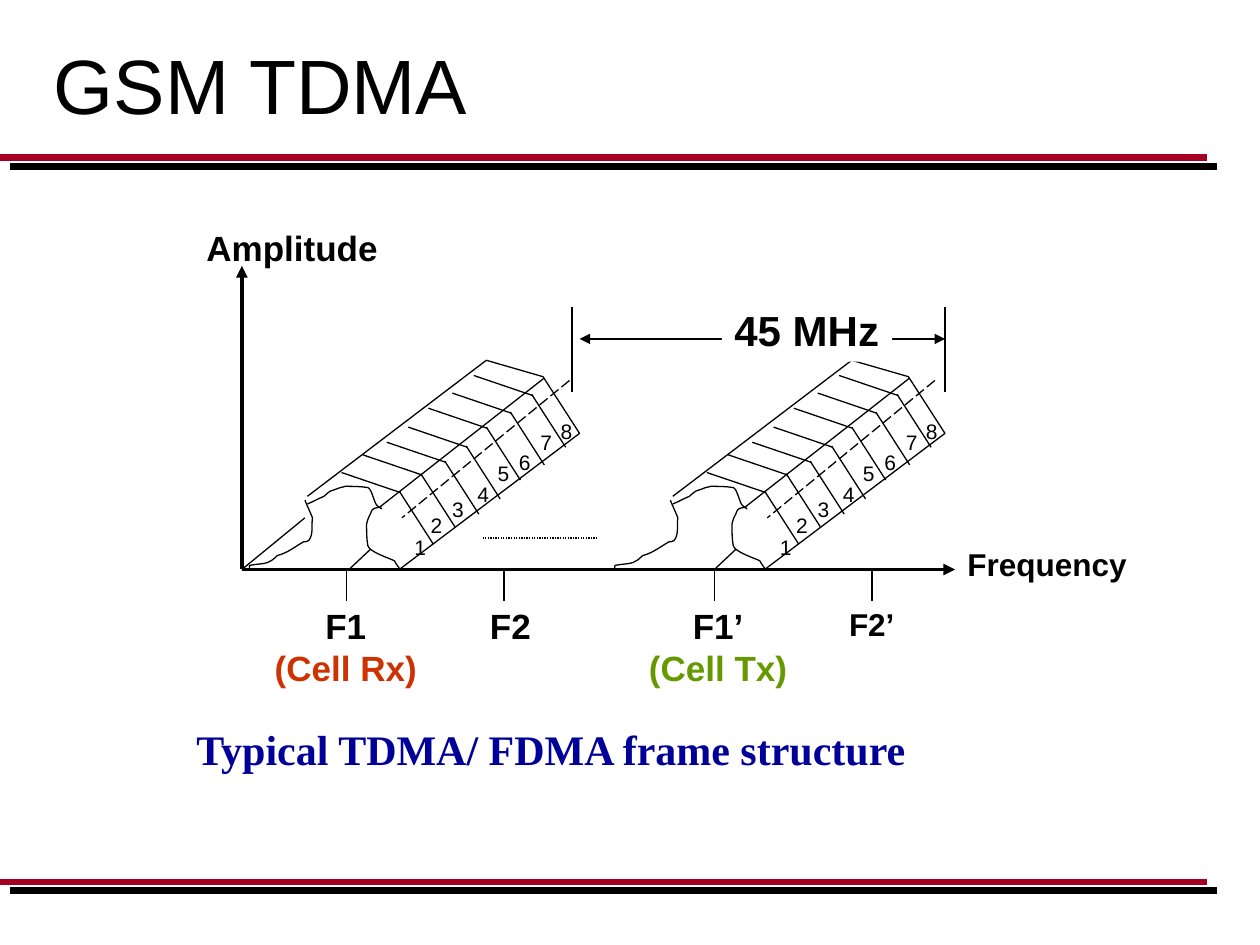
from lxml.etree import SubElement as Sub
from pptx import Presentation
from pptx.dml.color import RGBColor as Rgb
from pptx.enum.dml import MSO_LINE as Dash
from pptx.enum.shapes import MSO_CONNECTOR as Link
from pptx.enum.text import MSO_ANCHOR as Anchor, MSO_AUTO_SIZE as Auto, PP_ALIGN as Align
from pptx.oxml.ns import qn
from pptx.util import Cm, Pt

UNIT = Cm(0.0254)  # grid step: a hundredth of an inch
THEME = {
    "ink": "000000", "paper": "FFFFFF", "rule": "A50021", "edge": "0000FF",
    "rx": "CC3300", "tx": "669900", "note": "000099",
    "sans": "Arial", "serif": "Times New Roman",
    "title": 44, "big": 24, "label": 20, "small": 18, "digit": 12,
    "thin": 0.75, "axis": 2.25, "bar": 4,
}

deck = Presentation()
deck.slide_width, deck.slide_height = Cm(25.4), Cm(19.05)
slide = deck.slides.add_slide(deck.slide_layouts[6])
shapes = slide.shapes


def draw_line(x1, y1, x2, y2, width="thin", color="ink", dash=None, ends=()):
    """Draw a line; ends names the arrowhead elements to add."""
    link = shapes.add_connector(Link.STRAIGHT, *(UNIT * n for n in (x1, y1, x2, y2)))
    link.line.color.rgb = Rgb.from_string(THEME[color])
    style = {"width": Pt(THEME[width]), "dash_style": dash}
    for key, value in style.items():
        setattr(link.line, key, value)
    props = link.element.spPr
    for end in ends:
        Sub(props.find(qn("a:ln")), qn(f"a:{end}"), type="triangle")
    return Sub(props, qn("a:effectLst"))


def write(x, y, w, h, rows, size, bold=True, face="sans", wrap=False, align=None):
    """Write rows of (text, color) in a box, one paragraph each."""
    box = shapes.add_textbox(*(UNIT * n for n in (x, y, w, h)))
    frame = box.text_frame
    frame.word_wrap = wrap
    frame.auto_size = Auto.SHAPE_TO_FIT_TEXT
    style = {"name": THEME[face], "size": Pt(THEME[size]), "bold": bold}
    for i, (text, color) in enumerate(rows):
        para = frame.add_paragraph() if i else frame.paragraphs[0]
        para.alignment = align
        run = para.add_run()
        run.text = text
        run.font.color.rgb = Rgb.from_string(THEME[color])
        for key, value in style.items():
            setattr(run.font, key, value)
    return box


# Double rules above and below the content
for y in (125, 700):
    glow = draw_line(0, y, 958, y, "bar", "edge")
    shade = Sub(glow, qn("a:outerShdw"), dist=str(Pt(7.8)), dir="2400000",
                algn="ctr", rotWithShape="0")
    Sub(shade, qn("a:srgbClr"), val=THEME["ink"])
    draw_line(0, y, 958, y, "bar", "rule")

# Title
head = write(33, 0, 917, 133, [("GSM TDMA", "ink")], "title", bold=False, wrap=True)
head.text_frame.auto_size = Auto.NONE
head.text_frame.vertical_anchor = Anchor.MIDDLE

# Axes
draw_line(192, 452, 758, 452, "axis", ends=["tailEnd"])
draw_line(192, 211, 192, 452, "axis", ends=["headEnd"])

# Parts of one burst: block edge, torn curves, slot corners, digit places
BLOCK = [(244, 394), (386, 286), (431, 299), (460, 344), (317, 452)]
CURVES = [
    [(242, 397), (244, 402), (246, 406), (248, 411), (247, 417), (249, 424), (245, 429),
     (244, 430), (242, 430), (241, 430), (234, 434), (228, 439), (220, 441),
     (214, 447), (212, 447), (203, 448), (197, 449), (198, 448), (198, 451)],
    [(244, 400), (249, 398), (252, 396), (257, 394), (264, 388), (260, 391), (270, 387),
     (271, 387), (274, 386), (274, 386), (280, 386), (286, 386), (292, 387),
     (295, 388), (297, 399), (299, 401), (300, 402), (303, 404), (303, 404)],
    [(303, 402), (297, 404), (296, 402), (294, 408), (292, 411), (291, 416), (291, 416),
     (291, 422), (291, 428), (292, 433), (293, 438), (309, 443), (313, 445),
     (316, 450), (315, 448), (317, 451)],
]
SLOTS = [(376, 298), (359, 312), (340, 324), (324, 339), (307, 351), (288, 361), (271, 375)]
DIGITS = [(319, 419), (332, 402), (349, 389), (369, 377),
          (385, 361), (402, 352), (419, 336), (435, 327)]

# The same burst at the send and receive bands
for dx in (290, 0):
    for path in (BLOCK, *CURVES):
        spots = [(x + dx, y) for x, y in path]
        pen = shapes.build_freeform(*spots[0], scale=UNIT)
        pen.add_line_segments(spots[1:], close=False)
        form = pen.convert_to_shape()
        form.shadow.inherit = False
        form.fill.background()
        form.line.color.rgb = Rgb.from_string(THEME["ink"])
        form.line.width = Pt(THEME["thin"])
        if path is BLOCK:
            continue
        # Join each three points into one cubic curve
        trace = form.element.find(".//" + qn("a:path"))
        steps = trace.findall(qn("a:lnTo"))
        for i in range(0, len(steps), 3):
            bend = Sub(trace, qn("a:cubicBezTo"))
            for step in steps[i:i + 3]:
                bend.append(step[0])
                trace.remove(step)
    draw_line(432 + dx, 300, 302 + dx, 402)
    for x, y in SLOTS:
        draw_line(x + dx, y, x + dx + 47, y + 16)
        draw_line(x + dx + 46, y + 15, x + dx + 73, y + 57)
    draw_line(294 + dx, 436, 277 + dx, 452)
    draw_line(452 + dx, 302, 319 + dx, 411, dash=Dash.LONG_DASH)
    for n, (x, y) in reversed(list(enumerate(DIGITS, 1))):
        write(x + dx, y, 29, 30, [(str(n), "ink")], "digit", bold=False)
draw_line(242, 411, 192, 452)
draw_line(383, 427, 475, 427, dash=Dash.ROUND_DOT)

# Band spacing
for x in (454, 750):
    draw_line(x, 244, x, 311)
draw_line(460, 269, 750, 269, ends=["headEnd", "tailEnd"])
gap = write(573, 237, 135, 50, [("45 MHz", "ink")], "big")
gap.fill.solid()
gap.fill.fore_color.rgb = Rgb.from_string(THEME["paper"])

# Ticks and labels
write(758, 428, 147, 40, [("Frequency", "ink")], "small")
for x in (692, 567, 400, 275):
    draw_line(x, 452, x, 477)
for x, y, w, h, size, rows in [
    (664, 475, 56, 40, "small", [("F2’", "ink")]),
    (505, 475, 130, 77, "label", [("F1’", "ink"), ("(Cell Tx)", "tx")]),
    (379, 475, 53, 43, "label", [("F2", "ink")]),
    (208, 475, 133, 77, "label", [("F1", "ink"), ("(Cell Rx)", "rx")]),
    (154, 175, 156, 43, "label", [("Amplitude", "ink")]),
]:
    write(x, y, w, h, rows, size, align=Align.CENTER if len(rows) > 1 else None)

# Caption
write(146, 569, 758, 50, [("Typical TDMA/ FDMA frame structure", "note")],
      "big", face="serif", wrap=True)

deck.save("out.pptx")
